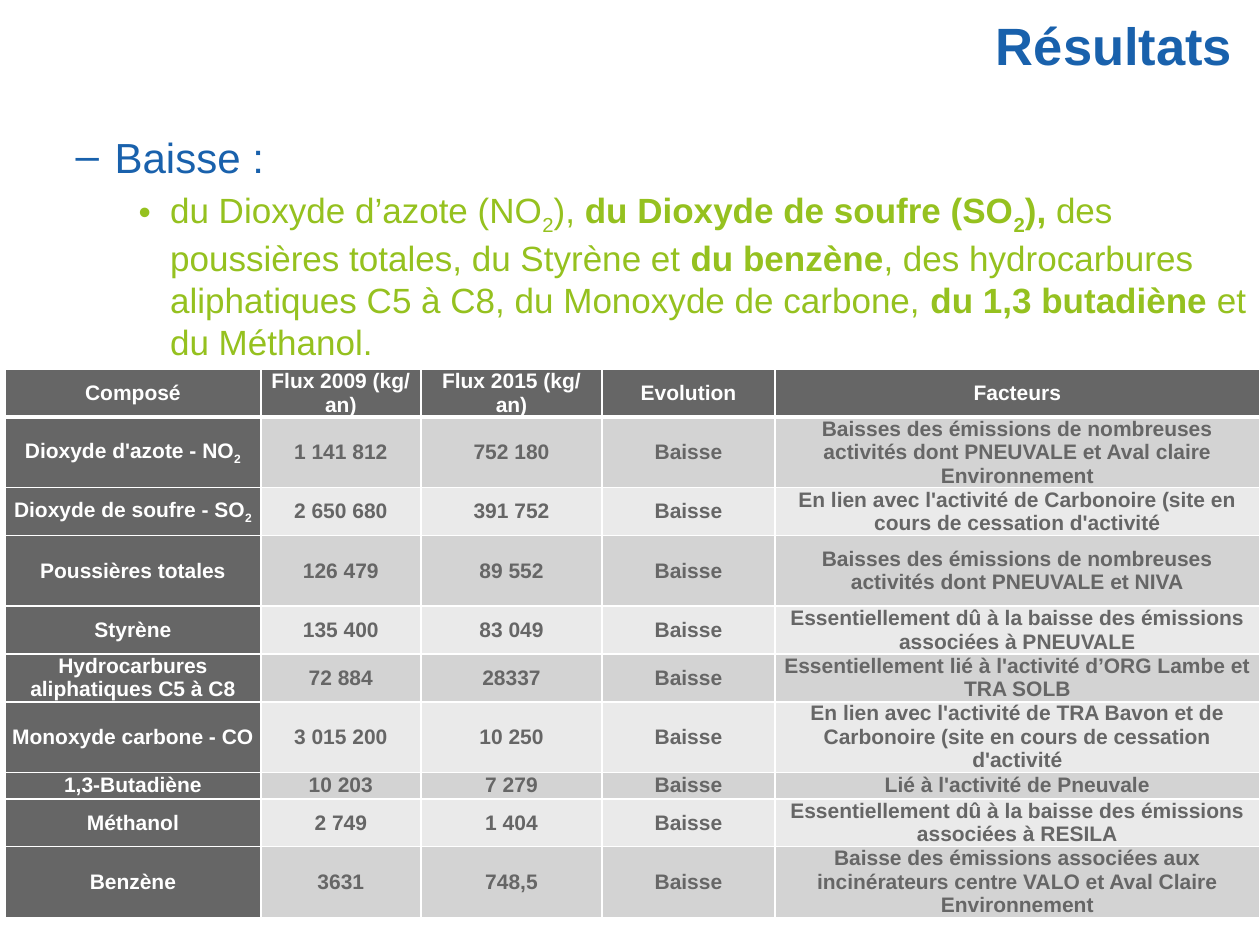
from itertools import product

from lxml.etree import SubElement
from pptx import Presentation
from pptx.dml.color import RGBColor
from pptx.enum.text import MSO_ANCHOR, PP_ALIGN
from pptx.oxml.ns import qn
from pptx.util import Inches, Pt

BLUE = RGBColor(0x19, 0x61, 0xAC)
GREEN = RGBColor(0x95, 0xC1, 0x1F)
DARK_GREY = RGBColor(0x66, 0x66, 0x66)
MID_GREY = RGBColor(0xD3, 0xD3, 0xD3)
LIGHT_GREY = RGBColor(0xEA, 0xEA, 0xEA)
WHITE = RGBColor(0xFF, 0xFF, 0xFF)
FONT = "Arial"

# Each compound: name, 2009 flow, 2015 flow, trend, factors
HEADER = ("Composé", "Flux 2009 (kg/ an)", "Flux 2015 (kg/ an)", "Evolution", "Facteurs")
COMPOUNDS = [
    ("Dioxyde d'azote - NO₂", "1 141 812", "752 180", "Baisse",
     "Baisses des émissions de nombreuses activités dont PNEUVALE et Aval claire Environnement"),
    ("Dioxyde de soufre - SO₂", "2 650 680", "391 752", "Baisse",
     "En lien avec l'activité de Carbonoire (site en cours de cessation d'activité"),
    ("Poussières totales", "126 479", "89 552", "Baisse",
     "Baisses des émissions de nombreuses activités dont PNEUVALE et NIVA"),
    ("Styrène", "135 400", "83 049", "Baisse",
     "Essentiellement dû à la baisse des émissions associées à PNEUVALE"),
    ("Hydrocarbures aliphatiques C5 à C8", "72 884", "28337", "Baisse",
     "Essentiellement lié à l'activité d’ORG Lambe et TRA SOLB"),
    ("Monoxyde carbone - CO", "3 015 200", "10 250", "Baisse",
     "En lien avec l'activité de TRA Bavon et de Carbonoire (site en cours de cessation d'activité"),
    ("1,3-Butadiène", "10 203", "7 279", "Baisse", "Lié à l'activité de Pneuvale"),
    ("Méthanol", "2 749", "1 404", "Baisse",
     "Essentiellement dû à la baisse des émissions associées à RESILA"),
    ("Benzène", "3631", "748,5", "Baisse",
     "Baisse des émissions associées aux incinérateurs centre VALO et Aval Claire Environnement"),
]
COLUMN_WIDTHS = (2.03, 1.27, 1.44, 1.37, 3.85)
ROW_HEIGHTS = (0.38, 0.56, 0.38, 0.56, 0.38, 0.38, 0.56, 0.21, 0.38, 0.56)


def place(shape, box):
    shape.left, shape.top, shape.width, shape.height = (Inches(length) for length in box)


def set_font(paragraph, size, color, bold=None):
    font = paragraph.font
    font.name, font.size, font.bold = FONT, Pt(size), bold
    font.color.rgb = color


def add_text(paragraph, text, bold=None):
    """Add text as runs, turning each ₂ into a lowered 2."""
    for index, part in enumerate(text.split("₂")):
        if index:
            subscript = paragraph.add_run()
            subscript.text = "2"
            subscript.font.bold = bold
            subscript._r.get_or_add_rPr().set("baseline", "-25000")
        if part:
            run = paragraph.add_run()
            run.text = part
            run.font.bold = bold


def set_bullet(paragraph, character, margin, indent):
    properties = paragraph._p.get_or_add_pPr()
    properties.set("marL", str(Inches(margin)))
    properties.set("indent", str(Inches(indent)))
    SubElement(properties, qn("a:buFont"), typeface=FONT)
    SubElement(properties, qn("a:buChar"), char=character)


def set_borders(cell, widths):
    properties = cell._tc.get_or_add_tcPr()
    for side, width in zip("LRTB", widths):
        line = SubElement(properties, qn(f"a:ln{side}"), w=str(Pt(width)))
        fill = SubElement(line, qn("a:solidFill"))
        SubElement(fill, qn("a:srgbClr"), val=str(WHITE))


def build_title(slide, box):
    title = slide.shapes.title
    place(title, box)
    frame = title.text_frame
    frame.vertical_anchor = MSO_ANCHOR.TOP
    frame.margin_right = Inches(0.22)
    paragraph = frame.paragraphs[0]
    paragraph.alignment = PP_ALIGN.RIGHT
    add_text(paragraph, "Résultats")
    set_font(paragraph, 30, BLUE, True)


def build_list(slide, box):
    body = slide.placeholders[1]
    place(body, box)
    frame = body.text_frame

    # Heading line
    heading = frame.paragraphs[0]
    heading.level = 1
    heading.space_before = Pt(0)
    set_bullet(heading, "–", 0.81, -0.31)
    add_text(heading, "Baisse\u00a0:")
    set_font(heading, 24, BLUE)

    # Compounds, the main ones in bold
    detail = frame.add_paragraph()
    detail.level = 2
    detail.space_before = Pt(4)
    set_bullet(detail, "•", 1.25, -0.25)
    for text, bold in (
        ("du Dioxyde d’azote (NO₂), ", False),
        ("du Dioxyde de soufre (SO₂), ", True),
        ("des poussières totales, du Styrène et ", False),
        ("du benzène", True),
        (", des hydrocarbures aliphatiques C5 à C8, du Monoxyde de carbone, ", False),
        ("du 1,3 butadiène", True),
        (" et du Méthanol.", False),
    ):
        add_text(detail, text, bold)
    set_font(detail, 20, GREEN)


def build_table(slide, left, top):
    rows = [HEADER, *COMPOUNDS]
    table = slide.shapes.add_table(
        len(rows), len(HEADER), Inches(left), Inches(top),
        Inches(sum(COLUMN_WIDTHS)), Inches(sum(ROW_HEIGHTS))).table
    for column, width in zip(table.columns, COLUMN_WIDTHS):
        column.width = Inches(width)
    for row, height in zip(table.rows, ROW_HEIGHTS):
        row.height = Inches(height)

    for row, column in product(range(len(rows)), range(len(HEADER))):
        cell = table.cell(row, column)
        is_heading = row == 0 or column == 0
        # A thicker line parts the header from the compounds
        set_borders(cell, (1, 1, 3 if row == 1 else 1, 3 if row == 0 else 1))
        cell.fill.solid()
        band = MID_GREY if row % 2 else LIGHT_GREY
        cell.fill.fore_color.rgb = DARK_GREY if is_heading else band
        cell.vertical_anchor = MSO_ANCHOR.MIDDLE
        cell.margin_left = cell.margin_right = Inches(0.05)
        cell.margin_top = cell.margin_bottom = 0
        paragraph = cell.text_frame.paragraphs[0]
        paragraph.alignment = PP_ALIGN.CENTER
        add_text(paragraph, rows[row][column])
        set_font(paragraph, 12, WHITE if is_heading else DARK_GREY, True)


def main():
    presentation = Presentation()
    presentation.slide_width, presentation.slide_height = Inches(10), Inches(7.5)
    slide = presentation.slides.add_slide(presentation.slide_layouts[1])
    build_title(slide, (2.29, 0.05, 7.71, 0.86))
    build_list(slide, (0, 0.99, 10, 6.13))
    build_table(slide, 0.04, 2.93)
    presentation.save("out.pptx")


if __name__ == "__main__":
    main()
